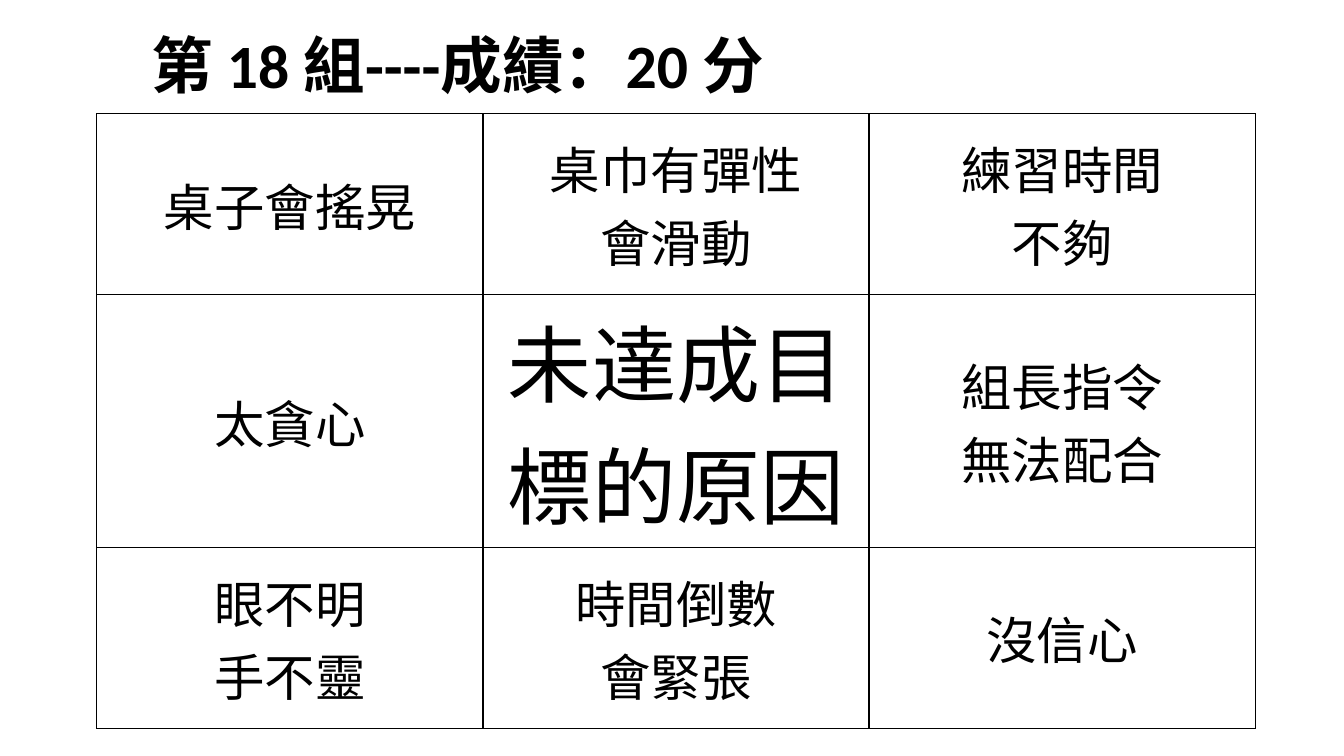
from dataclasses import dataclass

from lxml import etree
from pptx import Presentation
from pptx import util as u
from pptx.dml.color import RGBColor
from pptx.enum import text
from pptx.oxml import ns


@dataclass(frozen=True)
class Theme:
    font: str = "Calibri"
    ink: str = "000000"
    title_size: int = 44
    cell_size: int = 36
    center_size: int = 60
    border_width: int = 1


THEME = Theme()

TITLE = "第 18 組----成績：20 分"
REASONS = [
    ["桌子會搖晃", "桌巾有彈性\n會滑動", "練習時間\n不夠"],
    ["太貪心", "未達成目標的原因", "組長指令\n無法配合"],
    ["眼不明\n手不靈", "時間倒數\n會緊張", "沒信心"],
]
COLUMN_WIDTH = 3.83
ROW_HEIGHTS = [1.79, 2.01, 1.79]


def format_runs(para, size, bold=False):
    for span in para.runs:
        span.font.name = THEME.font
        span.font.size = u.Pt(size)
        span.font.bold = bold
        span.font.color.rgb = RGBColor.from_string(THEME.ink)


def add_title(page):
    title = page.shapes.title
    title.left, title.top = u.Inches(1.4), u.Inches(-0.04)
    title.width, title.height = u.Inches(10.43), u.Inches(1.45)
    frame = title.text_frame
    frame.text = TITLE
    frame.word_wrap = True
    frame.auto_size = text.MSO_AUTO_SIZE.NONE
    frame.vertical_anchor = text.MSO_ANCHOR.MIDDLE
    para = frame.paragraphs[0]
    para.alignment = text.PP_ALIGN.LEFT
    para.line_spacing = 0.9
    format_runs(para, THEME.title_size, bold=True)


def set_borders(cell):
    # Border lines come before the fill in the cell properties
    properties = cell._tc.get_or_add_tcPr()
    for index, side in enumerate(("lnL", "lnR", "lnT", "lnB")):
        line = etree.Element(ns.qn(f"a:{side}"), w=str(u.Pt(THEME.border_width)))
        fill = etree.SubElement(line, ns.qn("a:solidFill"))
        etree.SubElement(fill, ns.qn("a:srgbClr"), val=THEME.ink)
        properties.insert(index, line)


def fill_cell(cell, words, size):
    cell.text_frame.text = words
    cell.vertical_anchor = text.MSO_ANCHOR.MIDDLE
    cell.fill.background()
    set_borders(cell)
    for para in cell.text_frame.paragraphs:
        para.alignment = text.PP_ALIGN.CENTER
        format_runs(para, size)


def add_reason_table(page):
    rows, columns = len(REASONS), len(REASONS[0])
    table = page.shapes.add_table(
        rows, columns, u.Inches(0.96), u.Inches(1.13),
        u.Inches(COLUMN_WIDTH * columns), u.Inches(sum(ROW_HEIGHTS))).table
    table.first_row = False
    table.horz_banding = False
    for column in table.columns:
        column.width = u.Inches(COLUMN_WIDTH)
    for row, height in zip(table.rows, ROW_HEIGHTS):
        row.height = u.Inches(height)

    # The middle cell names the topic; the eight around it give reasons
    center = (rows // 2, columns // 2)
    for i, reasons in enumerate(REASONS):
        for j, words in enumerate(reasons):
            size = THEME.center_size if (i, j) == center else THEME.cell_size
            fill_cell(table.cell(i, j), words, size)


def main():
    deck = Presentation()
    deck.slide_width, deck.slide_height = u.Inches(13.33), u.Inches(7.5)
    page = deck.slides.add_slide(deck.slide_layouts.get_by_name("Title Only"))
    add_title(page)
    add_reason_table(page)
    deck.save("out.pptx")


if __name__ == "__main__":
    main()
